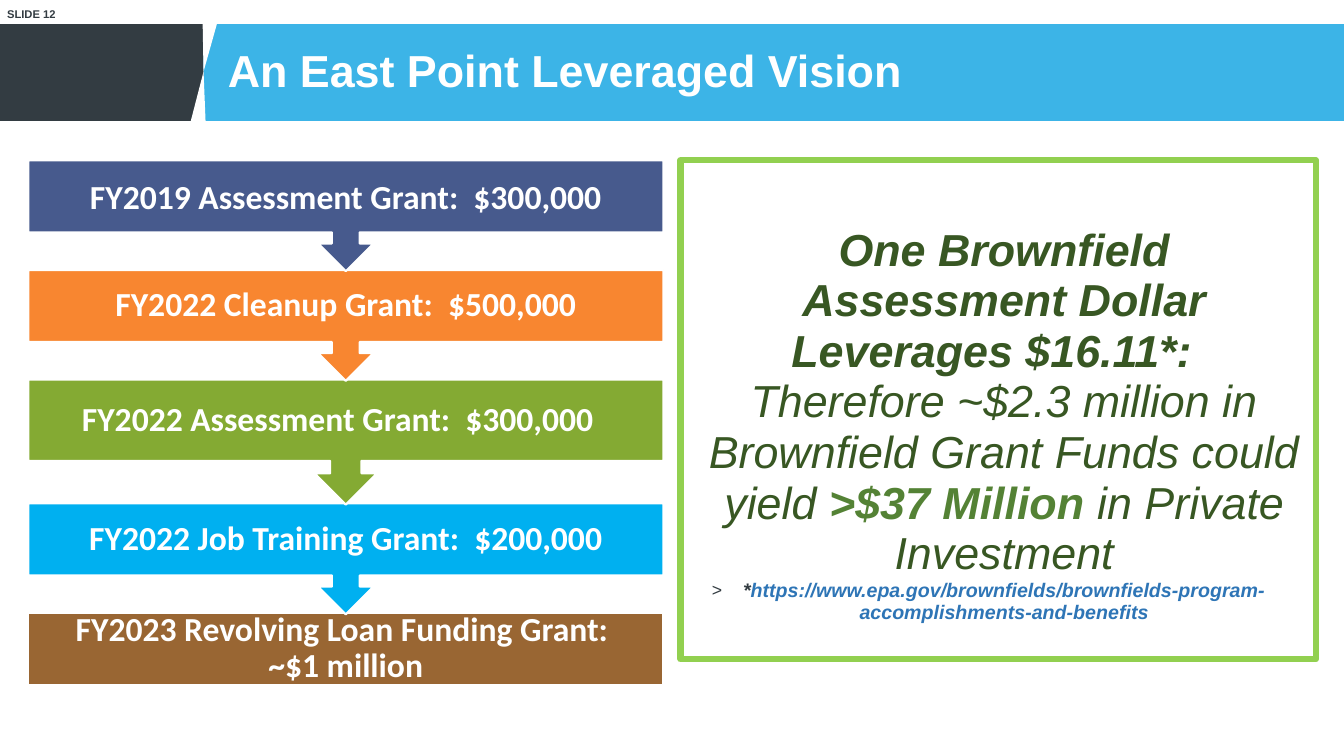
import dataclasses
import typing

import lxml.etree
import pptx
import pptx.dml.color
import pptx.enum.shapes
import pptx.enum.text
import pptx.oxml.ns
import pptx.util

WIDE, HIGH = pptx.util.Inches(13.33), pptx.util.Inches(7.5)
KIND = pptx.enum.shapes.MSO_SHAPE
ALIGN = pptx.enum.text.PP_ALIGN
HUES = {
    "slate": "333C42", "sky": "3CB4E7", "white": "FFFFFF", "navy": "475A8D",
    "orange": "F88630", "olive": "84AA33", "blue": "00B0F0", "brown": "996633",
    "lime": "92D050", "forest": "385723", "green": "548235", "link": "2E75B6",
}


@dataclasses.dataclass
class Box:
    """A frame in hundredths of the slide's width and height."""
    left: float
    top: float
    width: float
    height: float

    def place(self) -> tuple:
        return (across(self.left), down(self.top),
                across(self.width), down(self.height))


@dataclasses.dataclass
class Run:
    text: str
    hue: str = "white"
    bold: bool = True


@dataclasses.dataclass
class Grant:
    text: str
    hue: str
    height: float = 14.67
    kind: typing.Any = KIND.DOWN_ARROW_CALLOUT
    space: float = 0.9
    right: float = 0.19


GRANTS = [
    Grant("FY2019 Assessment Grant:  $300,000", "navy", space=1),
    Grant("FY2022 Cleanup Grant:  $500,000", "orange"),
    Grant("FY2022 Assessment Grant:  $300,000", "olive", height=16.53, right=0.35),
    Grant("FY2022 Job Training Grant:  $200,000", "blue"),
    Grant("FY2023 Revolving Loan Funding Grant:  ~$1 million", "brown",
          height=9.47, kind=KIND.RECTANGLE),
]
LEFT, RIGHT, TOP, SPAN, LAP = 2.1, 50.64, 21.2, 47.26, 0.16


def across(share: float) -> int:
    return round(WIDE * share / 100)


def down(share: float) -> int:
    return round(HIGH * share / 100)


def tint(name: str) -> pptx.dml.color.RGBColor:
    return pptx.dml.color.RGBColor.from_string(HUES[name])


def paint(shape, fill: str = "", line: str = "", width: float = 1.5) -> None:
    """Set fill and outline; an empty name means none."""
    shape.shadow.inherit = False
    if fill:
        shape.fill.solid()
        shape.fill.fore_color.rgb = tint(fill)
    else:
        shape.fill.background()
    if line:
        shape.line.color.rgb = tint(line)
        shape.line.width = pptx.util.Pt(width)
    else:
        shape.line.fill.background()


def frame(shape, insets: tuple, anchor: str = "MIDDLE"):
    """Prepare a text frame; insets are left, top, right, bottom in inches."""
    body = shape.text_frame
    body.word_wrap = True
    body.auto_size = pptx.enum.text.MSO_AUTO_SIZE.NONE
    body.vertical_anchor = pptx.enum.text.MSO_ANCHOR[anchor]
    sides = ("margin_left", "margin_top", "margin_right", "margin_bottom")
    for side, inset in zip(sides, insets):
        setattr(body, side, pptx.util.Inches(inset))
    return body


def write(para, *runs: Run, size: float, font: str = "Arial", align=ALIGN.CENTER,
          space: float = 0.9, italic: bool = False) -> None:
    para.alignment = align
    para.line_spacing = space
    para.space_before = para.space_after = pptx.util.Pt(0)
    for run in runs:
        part = para.add_run()
        part.text = run.text
        part.font.name = font
        part.font.size = pptx.util.Pt(size)
        part.font.bold = run.bold
        part.font.italic = italic
        part.font.color.rgb = tint(run.hue)


def add(node, tag: str, **attrs: str):
    return lxml.etree.SubElement(node, pptx.oxml.ns.qn(tag), **attrs)


def indent(para, hang: float = 0, mark: str = "") -> None:
    """Indent a paragraph, with a bullet when a mark is given."""
    props = para._p.get_or_add_pPr()
    props.set("marL", str(pptx.util.Inches(0.12)))
    props.set("indent", str(pptx.util.Inches(hang)))
    if mark:
        add(add(props, "a:buClr"), "a:srgbClr", val=HUES["slate"])
        add(props, "a:buSzPct", val="90000")
        add(props, "a:buFont", typeface="Arial")
        add(props, "a:buChar", char=mark)


def banner(slide) -> None:
    for box, hue in ((Box(0, 3.2, 15.15, 12.8), "slate"),
                     (Box(15.15, 3.2, 84.85, 12.8), "sky")):
        paint(slide.shapes.add_shape(KIND.RECTANGLE, *box.place()), hue)

    mid = (across(15.15), down(9.47))
    pen = slide.shapes.build_freeform(across(15.08), down(2.8))
    pen.add_line_segments([mid, (across(16.2), down(2.8))])
    pen.move_to(across(15.3), down(16.13))
    pen.add_line_segments([mid, (across(14.18), down(16.13))])
    paint(pen.convert_to_shape(), "white")

    label = slide.shapes.add_textbox(*Box(0, 0.27, 9.45, 3.2).place())
    body = frame(label, (0.07, 0.05, 0.1, 0.05), "TOP")
    write(body.paragraphs[0], Run("SLIDE 12", "slate"), size=8,
          align=ALIGN.LEFT, space=1)

    title = slide.shapes.title
    title.left, title.top, title.width, title.height = Box(16.2, 3.2, 82.74, 12.8).place()
    body = frame(title, (0.1, 0.05, 0.1, 0.05))
    write(body.paragraphs[0], Run("An East Point Leveraged Vision"), size=32,
          align=ALIGN.LEFT)
    slide.shapes.element.append(title.element)


def steps(slide) -> None:
    tops = [TOP]
    for grant in GRANTS[:-1]:
        tops.append(tops[-1] + grant.height - LAP)
    for grant, top in reversed(list(zip(GRANTS, tops))):
        box = Box(LEFT, top, SPAN, grant.height)
        shape = slide.shapes.add_shape(grant.kind, *box.place())
        paint(shape, grant.hue, "white")
        body = frame(shape, (0.19, 0.19, grant.right, 0.19))
        write(body.paragraphs[0], Run(grant.text), size=24, font="Calibri",
              space=grant.space)


def panel(slide) -> None:
    shape = slide.shapes.add_shape(KIND.RECTANGLE, *Box(RIGHT, TOP, SPAN, 66).place())
    paint(shape, line="lime", width=4.5)
    add(shape.line._get_or_add_ln(), "a:round")
    body = frame(shape, (0.1, 0.65, 0.1, 0.05), "TOP")
    lead, claim, note = body.paragraphs[0], body.add_paragraph(), body.add_paragraph()
    indent(lead)
    indent(claim)
    indent(note, -0.31, ">")
    write(lead, Run("One Brownfield Assessment Dollar Leverages $16.11*:  ", "forest"),
          size=32, space=0.94, italic=True)
    write(claim,
          Run("Therefore ~$2.3 million in Brownfield Grant Funds could yield ",
              "forest", False),
          Run(">$37 Million ", "green"),
          Run("in Private Investment", "forest", False),
          size=32, space=0.94, italic=True)
    write(note, Run("*", "slate"),
          Run("https://www.epa.gov/brownfields/brownfields-program-"
              "accomplishments-and-benefits", "link"),
          size=14, space=0.94, italic=True)


def main() -> None:
    deck = pptx.Presentation()
    deck.slide_width, deck.slide_height = WIDE, HIGH
    slide = deck.slides.add_slide(deck.slide_layouts[5])
    banner(slide)
    steps(slide)
    panel(slide)
    deck.save("out.pptx")


if __name__ == "__main__":
    main()
